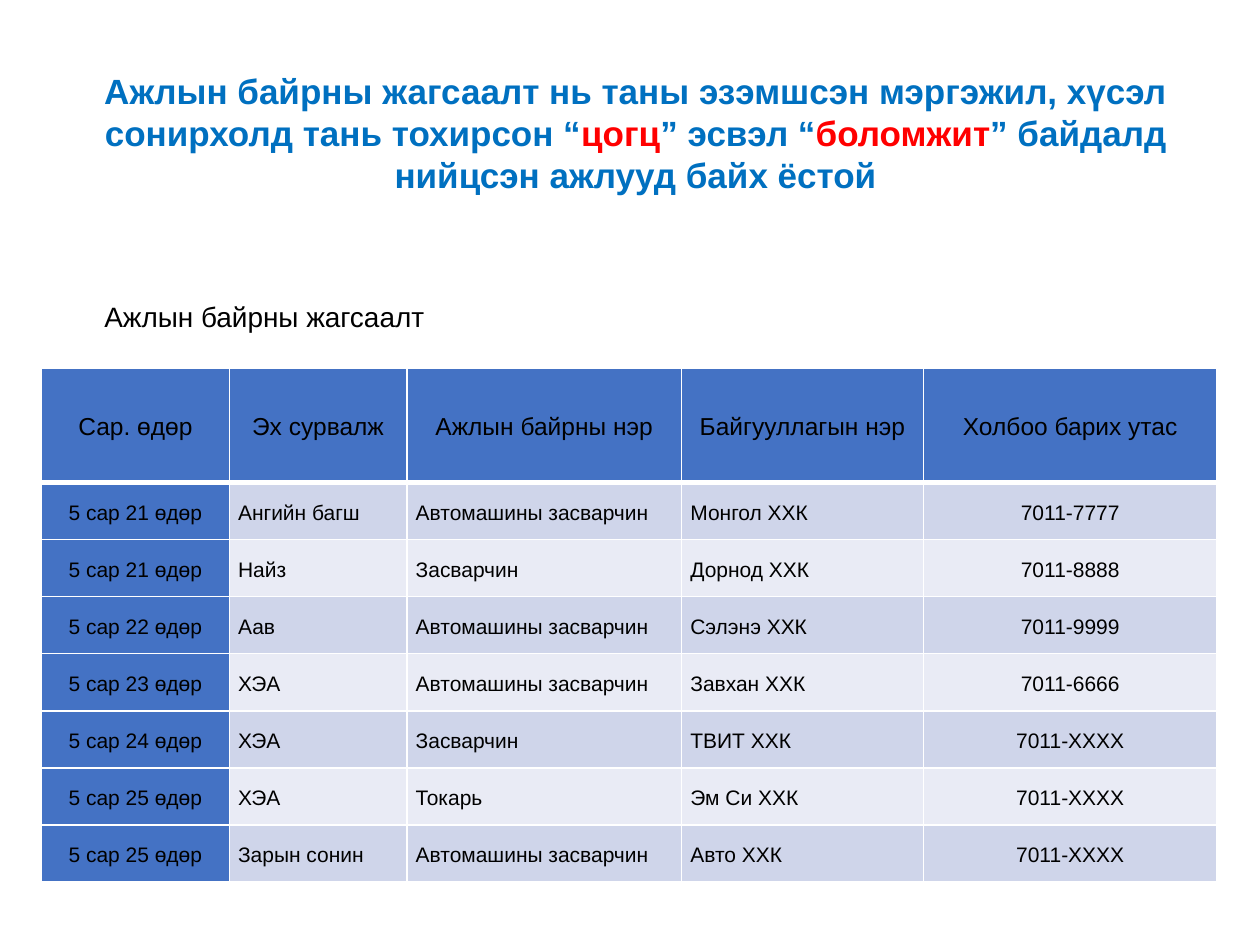
from lxml.etree import SubElement
from pptx import Presentation
from pptx.dml.color import RGBColor
from pptx.enum.text import MSO_ANCHOR, MSO_AUTO_SIZE, PP_ALIGN
from pptx.oxml import parse_xml
from pptx.oxml.ns import nsdecls
from pptx.util import Inches, Pt

BLACK = RGBColor(0, 0, 0)
TITLE = RGBColor(0x00, 0x70, 0xC0)
RED = RGBColor(0xFF, 0, 0)
HEAD = RGBColor(0x44, 0x72, 0xC4)
BANDS = RGBColor(0xCF, 0xD5, 0xEA), RGBColor(0xE9, 0xEB, 0xF5)

PARTS = [
    ("Ажлын байрны жагсаалт нь таны эзэмшсэн мэргэжил, хүсэл "
     "сонирхолд тань тохирсон “", TITLE),
    ("цогц", RED),
    ("” эсвэл “", TITLE),
    ("боломжит", RED),
    ("” байдалд нийцсэн ажлууд байх ёстой", TITLE),
]
JOBS = [
    ("Сар. өдөр", "Эх сурвалж", "Ажлын байрны нэр", "Байгууллагын нэр", "Холбоо барих утас"),
    ("5 сар 21 өдөр", "Ангийн багш", "Автомашины засварчин", "Монгол ХХК", "7011-7777"),
    ("5 сар 21 өдөр", "Найз", "Засварчин", "Дорнод ХХК", "7011-8888"),
    ("5 сар 22 өдөр", "Аав", "Автомашины засварчин", "Сэлэнэ ХХК", "7011-9999"),
    ("5 сар 23 өдөр", "ХЭА", "Автомашины засварчин", "Завхан ХХК", "7011-6666"),
    ("5 сар 24 өдөр", "ХЭА", "Засварчин", "ТВИТ ХХК", "7011-ХХХХ"),
    ("5 сар 25 өдөр", "ХЭА", "Токарь", "Эм Си ХХК", "7011-ХХХХ"),
    ("5 сар 25 өдөр", "Зарын сонин", "Автомашины засварчин", "Авто ХХК", "7011-ХХХХ"),
]
WIDTHS = [1.49, 1.41, 2.18, 1.92, 2.33]


class Deck:
    font = "Arial"

    def __init__(self, wide, high):
        self.prs = Presentation()
        self.prs.slide_width, self.prs.slide_height = Inches(wide), Inches(high)
        self.slide = self.prs.slides.add_slide(self.prs.slide_layouts[5])

    def style(self, run, size, color=BLACK, bold=False):
        font = run.font
        font.name, font.size, font.bold = self.font, Pt(size), bold
        font.color.rgb = color

    def title(self, parts, x, y, w, h):
        shape = self.slide.shapes.title
        shape.left, shape.top, shape.width, shape.height = map(Inches, (x, y, w, h))
        frame = shape.text_frame
        frame.vertical_anchor = MSO_ANCHOR.TOP
        frame.auto_size = MSO_AUTO_SIZE.SHAPE_TO_FIT_TEXT
        para = frame.paragraphs[0]
        para.alignment = PP_ALIGN.CENTER
        for text, color in parts:
            run = para.add_run()
            run.text = text
            self.style(run, 20, color, True)

    def label(self, text, x, y, w, h, indent):
        """Add one unwrapped line with a first-line indent."""
        box = self.slide.shapes.add_textbox(*map(Inches, (x, y, w, h)))
        frame = box.text_frame
        frame.word_wrap = False
        frame.auto_size = MSO_AUTO_SIZE.SHAPE_TO_FIT_TEXT
        frame.text = text
        para = frame.paragraphs[0]
        para.alignment = PP_ALIGN.LEFT
        props = para._p.get_or_add_pPr()
        props.set("marL", "0")
        props.set("indent", str(Inches(indent)))
        self.style(para.runs[0], 16)

    def table(self, rows, widths, x, y, h, top):
        """Add a table whose first row is top inches high; the rest share h."""
        shape = self.slide.shapes.add_table(
            len(rows), len(widths), *map(Inches, (x, y, sum(widths), h)))
        table = shape.table
        table.horz_banding = False
        for col, width in zip(table.columns, widths):
            col.width = Inches(width)
        for r, row in enumerate(rows):
            table.rows[r].height = Inches(top if r == 0 else (h - top) / (len(rows) - 1))
            for c, text in enumerate(row):
                self.cell(table.cell(r, c), text, r, c, c in (0, len(row) - 1))

    def cell(self, cell, text, r, c, mid):
        cell.margin_left = cell.margin_right = Inches(0.07)
        cell.margin_top = cell.margin_bottom = 0
        cell.vertical_anchor = MSO_ANCHOR.MIDDLE
        cell.fill.solid()
        cell.fill.fore_color.rgb = HEAD if r == 0 or c == 0 else BANDS[(r - 1) % 2]
        cell.text_frame.text = text
        para = cell.text_frame.paragraphs[0]
        para.alignment = PP_ALIGN.CENTER if mid or r == 0 else PP_ALIGN.JUSTIFY
        para.line_spacing = 1.15
        self.style(para.runs[0], 14 if r == 0 else 12)
        self.edges(cell, top=3 if r == 1 else 1, bottom=3 if r == 0 else 1)

    def edges(self, cell, top, bottom):
        """Draw white borders, placed ahead of the fill as the schema asks."""
        props = cell._tc.get_or_add_tcPr()
        for i, (side, width) in enumerate(zip("LRTB", (1, 1, top, bottom))):
            line = parse_xml(f'<a:ln{side} {nsdecls("a")} w="{Pt(width)}"/>')
            fill = SubElement(line, line.tag.replace(f"ln{side}", "solidFill"))
            SubElement(fill, fill.tag.replace("solidFill", "srgbClr"), val="FFFFFF")
            props.insert(i, line)


def main():
    deck = Deck(10, 7.5)
    deck.title(PARTS, 0.42, 0.5, 9.25, 1.11)
    deck.table(JOBS, WIDTHS, 0.33, 2.92, 4.08, 0.91)
    deck.label("Ажлын байрны жагсаалт", 0.17, 2.33, 3.34, 0.37, 0.56)
    deck.prs.save("out.pptx")


if __name__ == "__main__":
    main()
